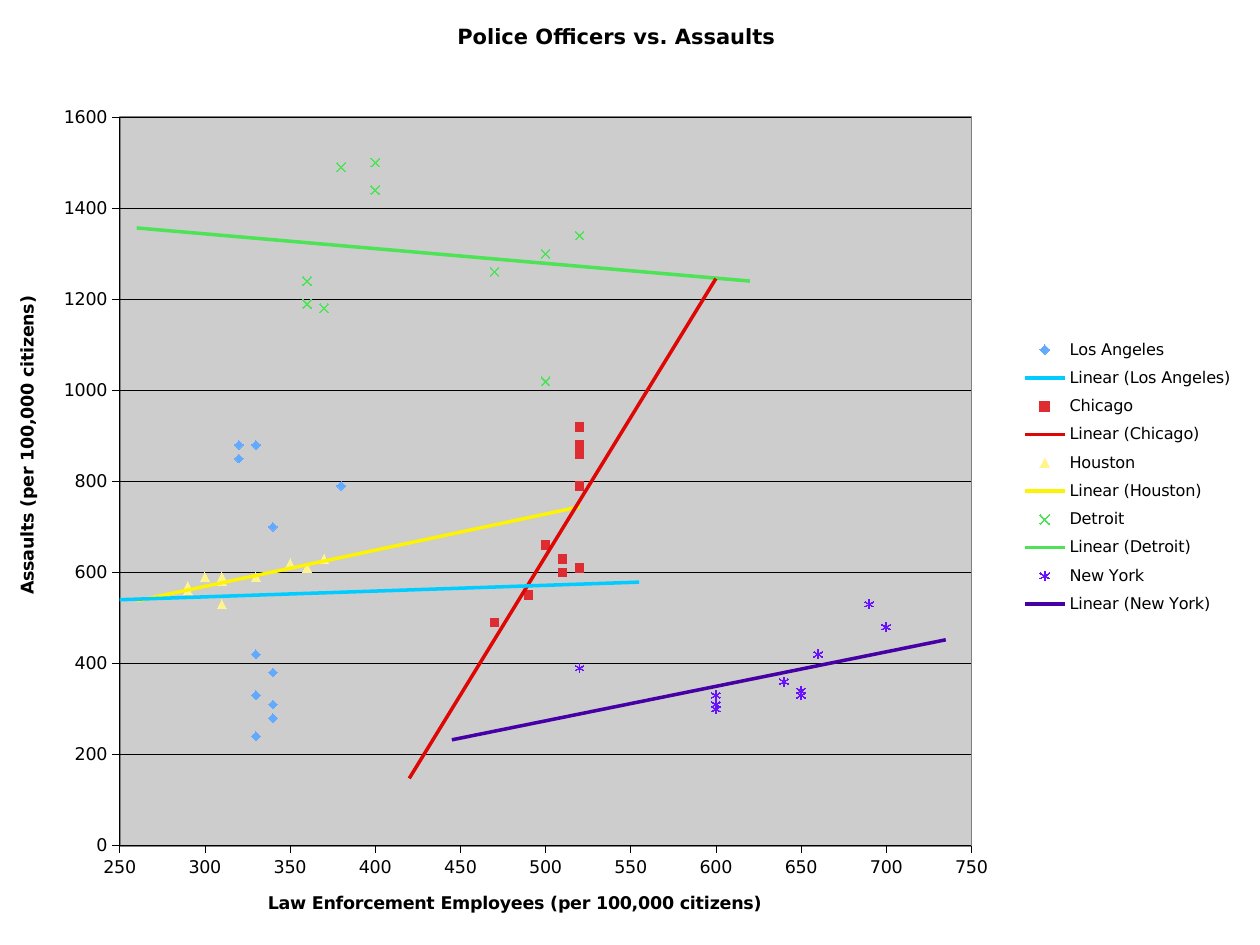
import pptx
import pptx.chart.data
import pptx.dml.color
import pptx.enum.chart
import pptx.oxml
import pptx.oxml.ns
import pptx.util

FONT = "DejaVu Sans"
CHART_NAMESPACE = pptx.oxml.ns.nsdecls("c", "a")
qualified = pptx.oxml.ns.qn


def color(hex_string):
    return pptx.dml.color.RGBColor.from_string(hex_string)


def place(element, position, inner=False):
    for layout in element.findall(qualified("c:layout")):
        element.remove(layout)
    target = '<c:layoutTarget val="inner"/>' if inner else ""
    modes = '<c:xMode val="edge"/><c:yMode val="edge"/>'
    values = "".join(f'<c:{name} val="{value}"/>' for name, value in zip("xywh", position))
    layout = pptx.oxml.parse_xml(
        f"<c:layout {CHART_NAMESPACE}><c:manualLayout>{target}{modes}{values}"
        "</c:manualLayout></c:layout>")
    if inner:
        element.insert(0, layout)
    else:
        element.find(qualified("c:overlay")).addprevious(layout)


MARKER = pptx.enum.chart.XL_MARKER_STYLE
cities = [
    ("Los Angeles", MARKER.DIAMOND, "63AAFE", "00CCFF", 175, 75,
     [(330, 880), (320, 880), (320, 850), (380, 790), (340, 700), (330, 420),
      (340, 380), (330, 330), (340, 310), (340, 280), (330, 240)]),
    ("Chicago", MARKER.SQUARE, "DD2D32", "DD0806", 80, 50,
     [(520, 920), (520, 880), (520, 860), (520, 790), (500, 660), (510, 630),
      (520, 610), (520, 610), (510, 600), (490, 550), (470, 490)]),
    ("Houston", MARKER.TRIANGLE, "FFF58C", "FCF305", 150, 30,
     [(370, 630), (360, 610), (350, 620), (330, 590), (310, 590), (290, 570),
      (290, 560), (290, 560), (300, 590), (310, 580), (310, 530)]),
    ("Detroit", MARKER.X, "4EE257", "4EE257", 100, 100,
     [(520, 1340), (520, 1340), (500, 1300), (470, 1260), (500, 1020), (400, 1500),
      (380, 1490), (400, 1440), (370, 1180), (360, 1240), (360, 1190)]),
    ("New York", MARKER.STAR, "6711FF", "4600A5", 35, 75,
     [(690, 530), (700, 480), (660, 420), (520, 390), (640, 360), (650, 340),
      (650, 330), (650, 330), (600, 300), (600, 310), (600, 330)]),
]

presentation = pptx.Presentation()
presentation.slide_width = pptx.util.Cm(25.4)
presentation.slide_height = pptx.util.Cm(19.05)
slide = presentation.slides.add_slide(presentation.slide_layouts[6])

chart_data = pptx.chart.data.XyChartData()
for name, marker_style, marker_color, trend_color, forward, backward, points in cities:
    city_data = chart_data.add_series(name)
    for employees, assaults in points:
        city_data.add_data_point(employees, assaults)

chart = slide.shapes.add_chart(
    pptx.enum.chart.XL_CHART_TYPE.XY_SCATTER, 0, 0,
    presentation.slide_width, presentation.slide_height, chart_data).chart
chart.font.name = FONT
chart.font.size = pptx.util.Pt(10)
chart.font.color.rgb = color("000000")
plot = chart.plots[0]
plot.vary_by_categories = False

for series, city in zip(plot.series, cities):
    name, marker_style, marker_color, trend_color, forward, backward, points = city
    series.format.line.fill.background()
    series.marker.style = marker_style
    series.marker.size = 5
    series.marker.format.fill.solid()
    series.marker.format.fill.fore_color.rgb = color(marker_color)
    series.marker.format.line.color.rgb = color(marker_color)
    trendline = pptx.oxml.parse_xml(
        f'<c:trendline {CHART_NAMESPACE}><c:spPr><a:ln w="25400"><a:solidFill>'
        f'<a:srgbClr val="{trend_color}"/></a:solidFill></a:ln></c:spPr>'
        f'<c:trendlineType val="linear"/><c:forward val="{forward}"/>'
        f'<c:backward val="{backward}"/><c:dispRSqr val="0"/><c:dispEq val="0"/>'
        "</c:trendline>")
    series._element.find(qualified("c:xVal")).addprevious(trendline)

employee_axis, assault_axis = chart.category_axis, chart.value_axis
for axis, minimum, maximum, step in [(employee_axis, 250, 750, 50), (assault_axis, 0, 1600, 200)]:
    axis.minimum_scale = minimum
    axis.maximum_scale = maximum
    axis.major_unit = step
    axis.major_tick_mark = pptx.enum.chart.XL_TICK_MARK.OUTSIDE
    axis.minor_tick_mark = pptx.enum.chart.XL_TICK_MARK.NONE
    axis.tick_labels.number_format = "0"
    axis.tick_labels.number_format_is_linked = False
    axis.tick_labels.font.name = FONT
    axis.tick_labels.font.size = pptx.util.Pt(10)
    axis.tick_labels.font.color.rgb = color("000000")
    axis.format.line.color.rgb = color("000000")
    axis.format.line.width = pptx.util.Pt(0.25)
employee_axis.has_major_gridlines = False
assault_axis.has_major_gridlines = True
gridline = assault_axis.major_gridlines.format.line
gridline.color.rgb = color("000000")
gridline.width = pptx.util.Pt(0.25)

titles = [
    (chart, "Police Officers vs. Assaults", 12, 0, (0.36, 0.02)),
    (employee_axis, "Law Enforcement Employees (per 100,000 citizens)", 10, 0, (0.21, 0.94)),
    (assault_axis, "Assaults (per 100,000 citizens)", 10, -5400000, (0.01, 0.31)),
]
for owner, text, size, rotation, position in titles:
    owner.has_title = True
    title = owner.chart_title if owner is chart else owner.axis_title
    run = title.text_frame.paragraphs[0].add_run()
    run.text = text
    run.font.name = FONT
    run.font.size = pptx.util.Pt(size)
    run.font.bold = True
    run.font.color.rgb = color("000000")
    title._element.find(".//" + qualified("a:bodyPr")).set("rot", str(rotation))
    if title._element.find(qualified("c:overlay")) is None:
        title._element.append(pptx.oxml.parse_xml(f'<c:overlay {CHART_NAMESPACE} val="0"/>'))
    place(title._element, position)

chart.has_legend = True
legend = chart.legend
legend.position = pptx.enum.chart.XL_LEGEND_POSITION.RIGHT
legend.include_in_layout = False
legend.font.name = FONT
legend.font.size = pptx.util.Pt(9.2)
legend.font.color.rgb = color("000000")
place(legend._element, (0.81, 0.35, 0.17, 0.31))

plot_area = chart._chartSpace.find(".//" + qualified("c:plotArea"))
place(plot_area, (0.095, 0.124, 0.676, 0.771), inner=True)
plot_area.append(pptx.oxml.parse_xml(
    f'<c:spPr {CHART_NAMESPACE}><a:solidFill><a:srgbClr val="CDCDCD"/></a:solidFill>'
    '<a:ln w="12700"><a:solidFill><a:srgbClr val="808080"/></a:solidFill></a:ln></c:spPr>'))

presentation.save("out.pptx")
